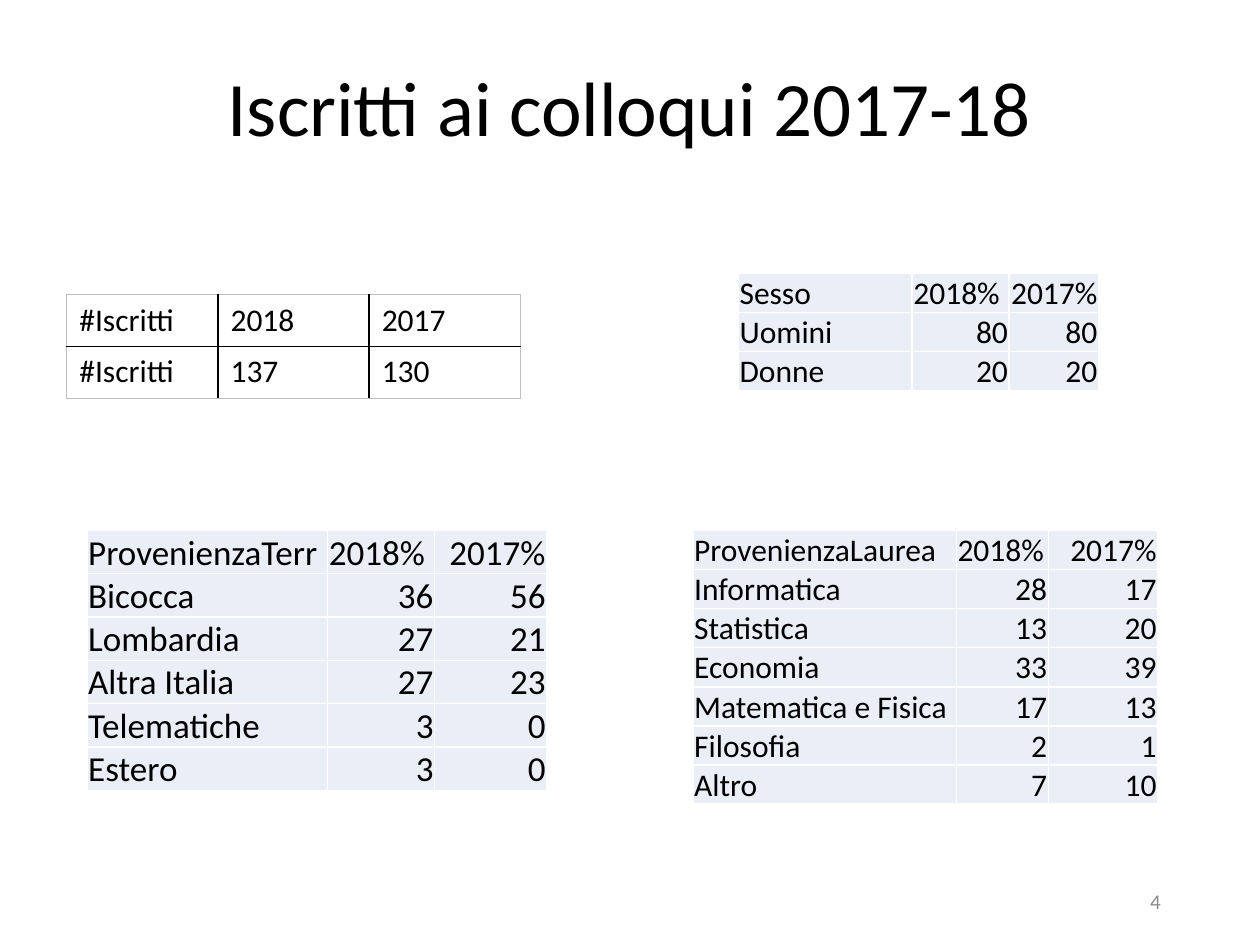
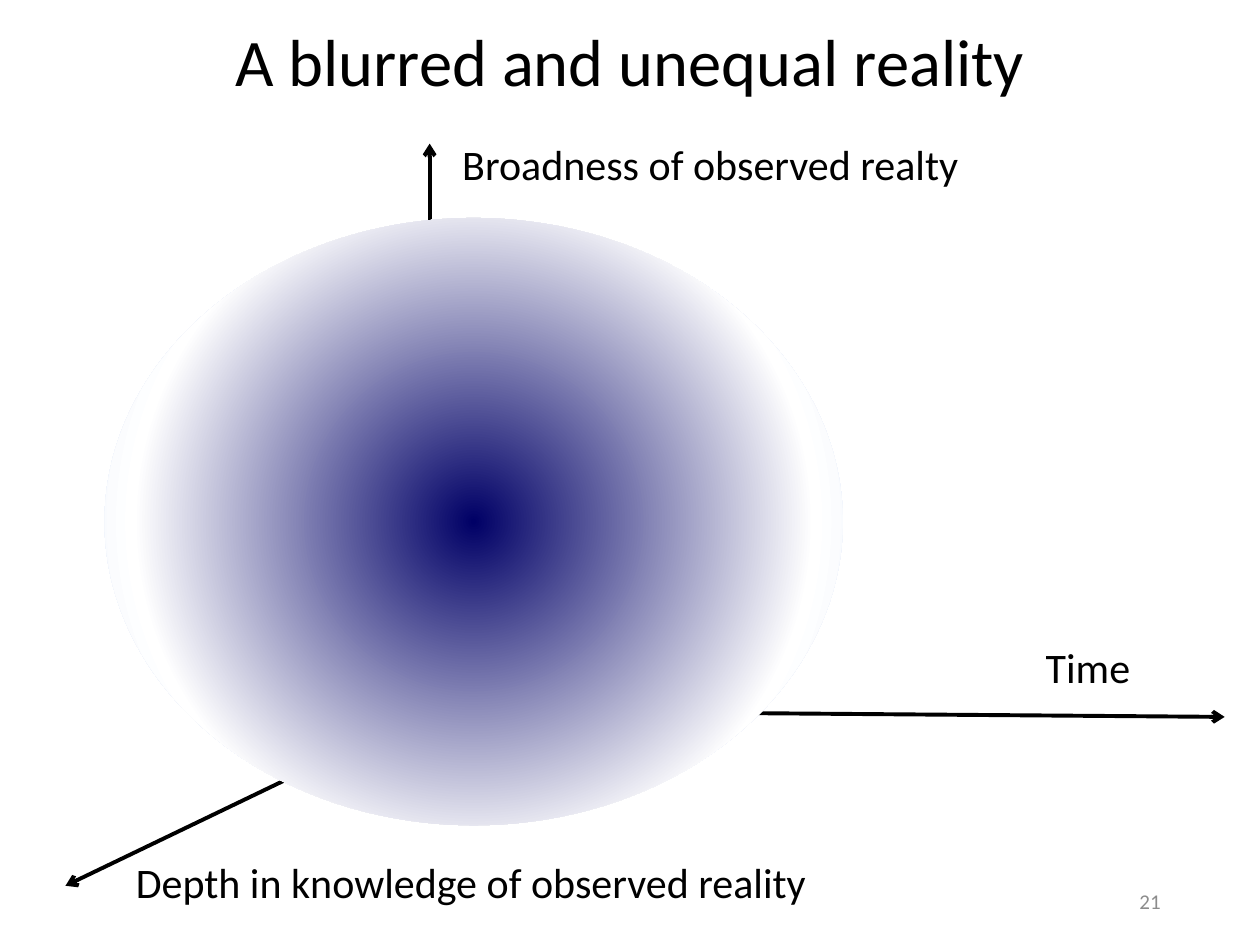
import lxml.etree
import pptx
import pptx.dml.color
import pptx.enum.shapes
import pptx.enum.text
import pptx.oxml
import pptx.oxml.ns
import pptx.util

Inches, Pt = pptx.util.Inches, pptx.util.Pt
RGBColor = pptx.dml.color.RGBColor
Align, Anchor = pptx.enum.text.PP_ALIGN, pptx.enum.text.MSO_ANCHOR
qn = pptx.oxml.ns.qn

BLACK = RGBColor(0x00, 0x00, 0x00)
WHITE = RGBColor(0xFF, 0xFF, 0xFF)
GREY = RGBColor(0x8C, 0x8C, 0x8C)
PALE_GREY = RGBColor(0xBF, 0xBF, 0xBF)
CELL_BLUE = RGBColor(0xEA, 0xEF, 0xF7)
NAVY = RGBColor(0x00, 0x00, 0x66)
RIM_BLUE = RGBColor(0xE1, 0xEB, 0xFB)
FONT = "Calibri"


def write(text_frame, text, size, color=BLACK, align=Align.LEFT):
    text_frame.text = text
    paragraph = text_frame.paragraphs[0]
    paragraph.alignment = align
    font = paragraph.runs[0].font
    font.name, font.size, font.color.rgb = FONT, Pt(size), color


def set_border(cell, side, color, width):
    """Draw one side (L, R, T or B) of a cell; call in that order, before the fill."""
    line = lxml.etree.SubElement(
        cell._tc.get_or_add_tcPr(), qn(f"a:ln{side}"), w=str(Pt(width)))
    fill = lxml.etree.SubElement(line, qn("a:solidFill"))
    lxml.etree.SubElement(fill, qn("a:srgbClr"), val=str(color))


presentation = pptx.Presentation()
presentation.slide_width, presentation.slide_height = Inches(10), Inches(7.5)

# Titles and page numbers
slides = []
for title, box, size, number in [
    ("Iscritti ai colloqui 2017-18", (0.69, 0.4, 8.62, 0.97), 44, "4"),
    ("A blurred and unequal reality", (0.12, 0.11, 9.76, 0.81), 38, "21"),
]:
    slide = presentation.slides.add_slide(presentation.slide_layouts[5])
    shape = slide.shapes.title
    shape.left, shape.top, shape.width, shape.height = map(Inches, box)
    write(shape.text_frame, title, size, align=Align.CENTER)
    shape.text_frame.auto_size = pptx.enum.text.MSO_AUTO_SIZE.NONE
    shape.text_frame.vertical_anchor = Anchor.MIDDLE
    shape.text_frame.paragraphs[0].line_spacing = 0.9
    page_box = slide.shapes.add_textbox(
        Inches(7.06), Inches(6.95), Inches(2.25), Inches(0.4))
    page_box.text_frame.word_wrap = True
    page_box.text_frame.vertical_anchor = Anchor.MIDDLE
    write(page_box.text_frame, number, 12, GREY, Align.RIGHT)
    slides.append(slide)
enrolment_slide, reality_slide = slides

# Enrolment tables: left, top, column widths, row height, size, shaded, rows
YEARS = ("2018%", "2017%")
tables = [
    (5.86, 2.17, (1.38, 0.77, 0.71), 0.31, 18, True, [
        ("Sesso", *YEARS), ("Uomini", "80", "80"), ("Donne", "20", "20")]),
    (0.69, 4.21, (1.91, 0.85, 0.89), 0.34, 20, True, [
        ("ProvenienzaTerr", *YEARS),
        ("Bicocca", "36", "56"),
        ("Lombardia", "27", "21"),
        ("Altra Italia", "27", "23"),
        ("Telematiche", "3", "0"),
        ("Estero", "3", "0")]),
    (5.5, 4.21, (2.09, 0.73, 0.87), 0.31, 18, True, [
        ("ProvenienzaLaurea", *YEARS),
        ("Informatica", "28", "17"),
        ("Statistica", "13", "20"),
        ("Economia", "33", "39"),
        ("Matematica e Fisica", "17", "13"),
        ("Filosofia", "2", "1"),
        ("Altro", "7", "10")]),
    (0.53, 2.34, (1.2, 1.2, 1.2), 0.41, 18, False, [
        ("#Iscritti", "2018", "2017"), ("#Iscritti", "137", "130")]),
]
for left, top, widths, row_height, size, shaded, rows in tables:
    table = enrolment_slide.shapes.add_table(
        len(rows), len(widths), Inches(left), Inches(top),
        Inches(sum(widths)), Inches(row_height * len(rows))).table
    table.first_row = table.horz_banding = False
    for column, width in zip(table.columns, widths):
        column.width = Inches(width)
    for r, row in enumerate(rows):
        table.rows[r].height = Inches(row_height)
        for c, text in enumerate(row):
            cell = table.cell(r, c)
            outer = {"L": c == 0, "R": c == len(row) - 1,
                     "T": r == 0, "B": r == len(rows) - 1}
            for side, on_edge in outer.items():
                if shaded:
                    set_border(cell, side, WHITE, 1)
                elif on_edge:
                    set_border(cell, side, PALE_GREY, 0.5)
                else:
                    set_border(cell, side, BLACK, 1)
            align = Align.LEFT
            if shaded:
                cell.fill.solid()
                cell.fill.fore_color.rgb = CELL_BLUE
                cell.vertical_anchor = Anchor.BOTTOM
                cell.margin_left = cell.margin_right = cell.margin_top = Inches(0.01)
                cell.margin_bottom = 0
                if c == 2 or (c == 1 and r > 0):
                    align = Align.RIGHT
            else:
                cell.fill.background()
            write(cell.text_frame, text, size, align=align)

# Three axes from one origin
ORIGIN = (Inches(3.41), Inches(5.64))
for end_x, end_y in [(3.41, 1.14), (9.72, 5.69), (0.52, 7.03)]:
    axis = reality_slide.shapes.add_connector(
        pptx.enum.shapes.MSO_CONNECTOR.STRAIGHT, *ORIGIN, Inches(end_x), Inches(end_y))
    axis.line.color.rgb = BLACK
    axis.line.width = Pt(2.25)
    lxml.etree.SubElement(axis.line._get_or_add_ln(), qn("a:tailEnd"), type="arrow")
    lxml.etree.SubElement(axis._element.spPr, qn("a:effectLst"))

for label, left, top, width in [
    ("Broadness of observed realty", 3.57, 1.05, 4.18),
    ("Time", 8.2, 5.04, 0.88),
    ("Depth in knowledge of observed reality", 0.98, 6.75, 5.57),
]:
    label_box = reality_slide.shapes.add_textbox(
        Inches(left), Inches(top), Inches(width), Inches(0.5))
    label_box.text_frame.word_wrap = False
    label_box.text_frame.auto_size = pptx.enum.text.MSO_AUTO_SIZE.SHAPE_TO_FIT_TEXT
    write(label_box.text_frame, label, 24)

# Blurred reality: a radial gradient that hides the origin
blur = reality_slide.shapes.add_shape(
    pptx.enum.shapes.MSO_SHAPE.OVAL, Inches(0.83), Inches(1.73), Inches(5.86), Inches(4.82))
blur.shadow.inherit = False
blur.line.fill.background()
blur.fill.background()
stops = "".join(
    f'<a:gs pos="{percent * 1000}"><a:srgbClr val="{color}"/></a:gs>'
    for percent, color in [(0, NAVY), (71, WHITE), (100, RIM_BLUE)])
gradient = pptx.oxml.parse_xml(
    f'<a:gradFill {pptx.oxml.ns.nsdecls("a")} rotWithShape="1"><a:gsLst>{stops}</a:gsLst>'
    '<a:path path="circle"><a:fillToRect l="50000" t="50000" r="50000" b="50000"/></a:path>'
    '</a:gradFill>')
properties = blur._element.spPr
properties.replace(properties.find(qn("a:noFill")), gradient)

presentation.save("out.pptx")
